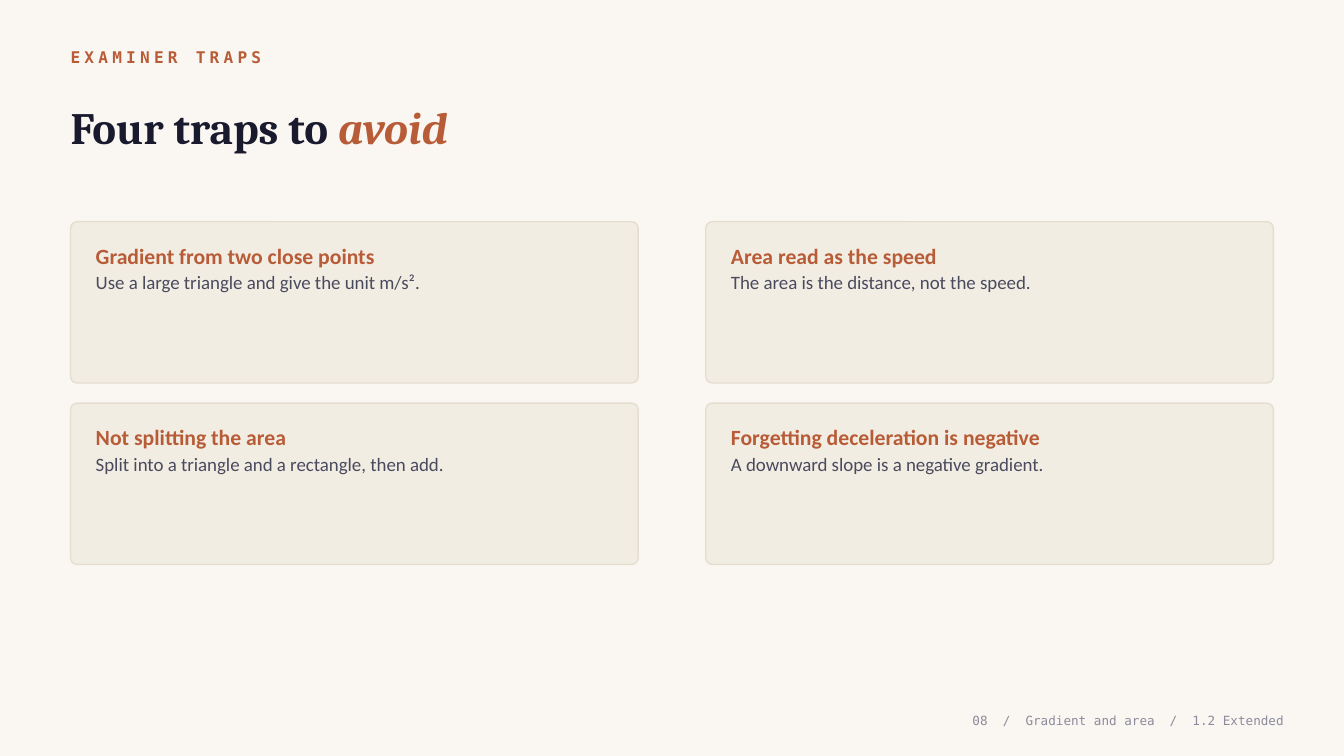
"""Build the slide of four examiner traps."""
from itertools import product
from pptx import Presentation
from pptx.dml.color import RGBColor as RGB
from pptx.enum.shapes import MSO_SHAPE as Shape
from pptx.enum.text import MSO_ANCHOR as Anchor, PP_ALIGN as Align
from pptx.util import Inches, Pt


class Theme:
    paper = RGB.from_string("FAF7F2")
    card = RGB.from_string("F2EDE3")
    edge = RGB.from_string("E5DDD0")
    rust = RGB.from_string("B85C38")
    ink = RGB.from_string("1A1A2E")
    slate = RGB.from_string("4A4A5E")
    mist = RGB.from_string("8B8B9C")
    mono, serif, sans = "DejaVu Sans Mono", "Cambria", "Calibri"
    label, title, head, body, foot = 11.5, 32, 15.5, 13.5, 9


def add_box(x, y, w, h, anchor=Anchor.MIDDLE):
    frame = slide.shapes.add_textbox(Inches(x), Inches(y), Inches(w), Inches(h)).text_frame
    frame.word_wrap = True
    frame.vertical_anchor = anchor
    frame.margin_left = frame.margin_right = frame.margin_top = frame.margin_bottom = 0
    return frame


def add_run(para, text, face, size, color, bold=False, italic=False, track=0):
    run = para.add_run()
    run.text = text
    font = run.font
    font.name, font.size, font.bold, font.italic = face, Pt(size), bold, italic
    font.color.rgb = color
    if track:
        run._r.get_or_add_rPr().set("spc", str(round(track * 100)))


deck = Presentation()
deck.slide_width, deck.slide_height = Inches(13.33), Inches(7.5)
slide = deck.slides.add_slide(deck.slide_layouts[6])
slide.background.fill.solid()
slide.background.fill.fore_color.rgb = Theme.paper

left, wide = 0.7, 11.93
label = add_box(left, 0.42, wide, 0.3).paragraphs[0]
add_run(label, "EXAMINER TRAPS", Theme.mono, Theme.label, Theme.rust, bold=True, track=3)

title = add_box(left, 0.78, wide, 0.95).paragraphs[0]
add_run(title, "Four traps to ", Theme.serif, Theme.title, Theme.ink, bold=True)
add_run(title, "avoid", Theme.serif, Theme.title, Theme.rust, bold=True, italic=True)

traps = [
    ("Gradient from two close points", "Use a large triangle and give the unit m/s²."),
    ("Area read as the speed", "The area is the distance, not the speed."),
    ("Not splitting the area", "Split into a triangle and a rectangle, then add."),
    ("Forgetting deceleration is negative", "A downward slope is a negative gradient."),
]
top, width, height = 2.2, 5.63, 1.6
step_x, step_y = 6.3, 1.8
pad_x, pad_y = 0.25, 0.18

for (row, col), (head, body) in zip(product(range(2), repeat=2), traps):
    x, y = left + col * step_x, top + row * step_y
    card = slide.shapes.add_shape(
        Shape.ROUNDED_RECTANGLE, Inches(x), Inches(y), Inches(width), Inches(height))
    card.adjustments[0] = 0.04
    card.shadow.inherit = False
    card.fill.solid()
    card.fill.fore_color.rgb = Theme.card
    card.line.color.rgb = Theme.edge
    card.line.width = Pt(1)

    frame = add_box(x + pad_x, y + pad_y, width - 2 * pad_x, height - 2 * pad_y, Anchor.TOP)
    first, second = frame.paragraphs[0], frame.add_paragraph()
    first.line_spacing = second.line_spacing = 1.1
    add_run(first, head, Theme.sans, Theme.head, Theme.rust, bold=True)
    add_run(second, body, Theme.sans, Theme.body, Theme.slate)

foot = add_box(8.33, 7, 4.4, 0.3).paragraphs[0]
foot.alignment = Align.RIGHT
gap = (" ", 5.4)
slash = [gap, ("/", 0), gap]
for text, track in [("08", 0), *slash, ("Gradient and area", 0), *slash, ("1.2 Extended", 0)]:
    add_run(foot, text, Theme.mono, Theme.foot, Theme.mist, track=track)

deck.save("out.pptx")
